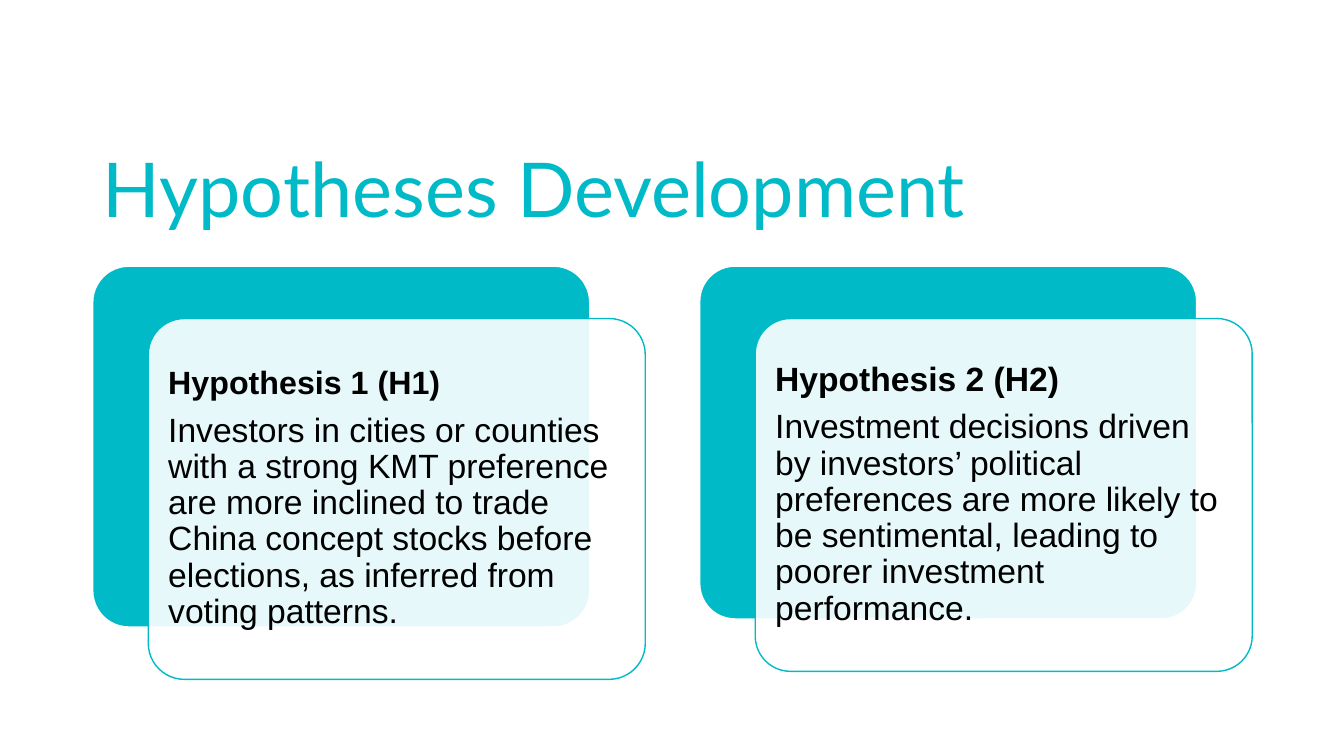
import pptx
import pptx.util
import pptx.dml.color
import pptx.enum.shapes
import pptx.enum.text
import lxml.etree

RGB = pptx.dml.color.RGBColor
TEAL = RGB(0x00, 0xBA, 0xC8)
WHITE = RGB(0xFF, 0xFF, 0xFF)
BLACK = RGB(0x00, 0x00, 0x00)

WIDE, HIGH = 13.33, 7.5
ANCHOR = pptx.enum.text.MSO_ANCHOR
ROUND = pptx.enum.shapes.MSO_SHAPE.ROUNDED_RECTANGLE

# Card layout, in percent of the slide's width and height
LEFT, TOP, WIDTH, STEP = 6.9, 35.2, 36.98, 45.16
SHIFT_X, SHIFT_Y = 4.13, 6.93
PAD_X, PAD_Y = 0.75, 1.4

# Heading, heading size, body, card height
CARDS = [
    ("Hypothesis 1 (H1)", 23,
     "Investors in cities or counties with a strong KMT preference are more "
     "inclined to trade China concept stocks before elections, as inferred "
     "from voting patterns.", 47.73),
    ("Hypothesis 2 (H2)", 24,
     "Investment decisions driven by investors’ political preferences are "
     "more likely to be sentimental, leading to poorer investment "
     "performance.", 46.67),
]


class Deck:
    """Holds the style and the current slide; lengths are percents of it."""

    def __init__(self):
        self.file = pptx.Presentation()
        self.file.slide_width = pptx.util.Inches(WIDE)
        self.file.slide_height = pptx.util.Inches(HIGH)
        self.slide = self.file.slides.add_slide(self.file.slide_layouts[5])

    def place(self, x, y, w, h):
        return [pptx.util.Inches(part * side / 100)
                for part, side in ((x, WIDE), (y, HIGH), (w, WIDE), (h, HIGH))]

    def style(self, para, font, size, color, bold=False):
        for run in para.runs:
            run.font.name = font
            run.font.size = pptx.util.Pt(size)
            run.font.bold = bold
            run.font.color.rgb = color

    def title(self, text, *box):
        shape = self.slide.shapes.title
        shape.left, shape.top, shape.width, shape.height = self.place(*box)
        frame = shape.text_frame
        frame.text = text
        frame.word_wrap = True
        frame.auto_size = pptx.enum.text.MSO_AUTO_SIZE.NONE
        frame.vertical_anchor = ANCHOR.BOTTOM
        frame.paragraphs[0].alignment = pptx.enum.text.PP_ALIGN.LEFT
        self.style(frame.paragraphs[0], "Lato", 54, TEAL)

    def panel(self, box, fill, line, alpha=None):
        shape = self.slide.shapes.add_shape(ROUND, *self.place(*box))
        shape.adjustments[0] = 0.1
        shape.shadow.inherit = False
        shape.fill.solid()
        shape.fill.fore_color.rgb = fill
        shape.line.color.rgb = line
        shape.line.width = pptx.util.Pt(1)
        if alpha is not None:
            tint = shape.fill._xPr.find(".//" + pptx.oxml.ns.qn("a:srgbClr"))
            node = lxml.etree.SubElement(tint, pptx.oxml.ns.qn("a:alpha"))
            node.set("val", str(alpha * 1000))

    def text(self, box, items):
        frame = self.slide.shapes.add_textbox(*self.place(*box)).text_frame
        frame.word_wrap = True
        frame.vertical_anchor = ANCHOR.MIDDLE
        frame.margin_left = frame.margin_right = pptx.util.Inches(0.1)
        frame.margin_top = frame.margin_bottom = pptx.util.Inches(0.1)
        frame.text = "\n".join(item[0] for item in items)
        for para, (_, size, bold) in zip(frame.paragraphs, items):
            para.line_spacing = 0.9
            para.space_after = pptx.util.Pt(8)
            self.style(para, "Arial", size, BLACK, bold)

    def card(self, x, y, w, h, head, size, body):
        self.panel((x, y, w, h), TEAL, WHITE)
        x, y = x + SHIFT_X, y + SHIFT_Y
        self.panel((x, y, w, h), WHITE, TEAL, 90)
        self.text((x + PAD_X, y + PAD_Y, w - 2 * PAD_X, h - 2 * PAD_Y),
                  [(head, size, True), (body, 24, False)])


def main():
    deck = Deck()

    # Title
    deck.title("Hypotheses Development", 6.9, 5.33, 86.25, 26.13)

    # Hypothesis cards
    for index, (head, size, body, high) in enumerate(CARDS):
        deck.card(LEFT + index * STEP, TOP, WIDTH, high, head, size, body)

    deck.file.save("out.pptx")


if __name__ == "__main__":
    main()
